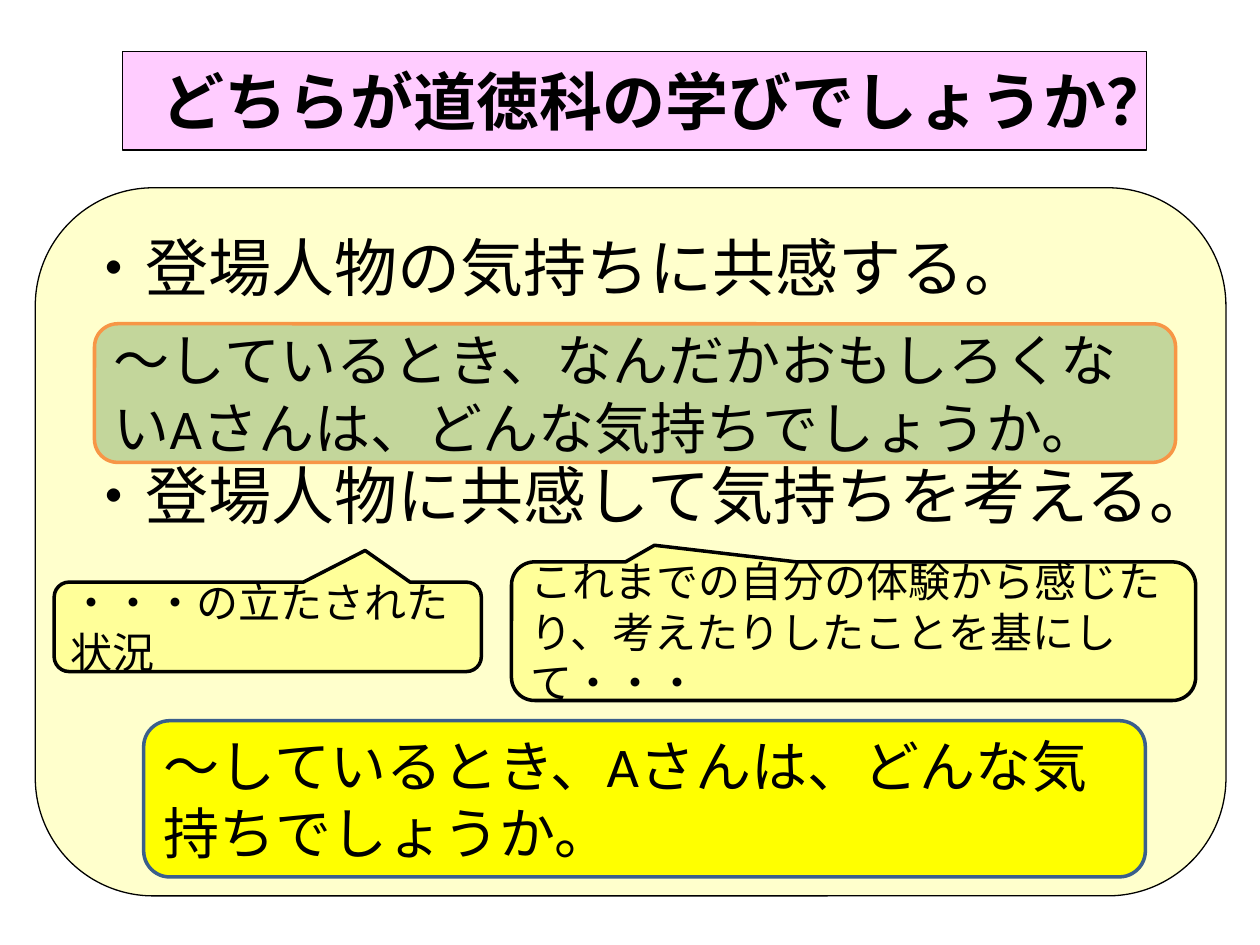
from lxml import etree
from pptx import Presentation
from pptx.dml.color import RGBColor
from pptx.enum.shapes import MSO_SHAPE
from pptx.enum.text import MSO_ANCHOR, MSO_AUTO_SIZE, PP_ALIGN
from pptx.oxml.ns import qn
from pptx.util import Inches, Pt

ROUNDED = MSO_SHAPE.ROUNDED_RECTANGLE
CALLOUT = MSO_SHAPE.ROUNDED_RECTANGULAR_CALLOUT
TITLE_ONLY = 5
BLACK = "000000"

TITLE = dict(
    box=(0.97, 0.41, 8.13, 0.78), texts=["どちらが道徳科の学びでしょうか？"],
    fill="FFCCFF", line=(BLACK, 0.75), font=dict(name="Arial", size=Pt(36), bold=True),
    frame=dict(word_wrap=False), paragraph=dict(alignment=PP_ALIGN.CENTER),
)
PANEL = dict(
    kind=ROUNDED, box=(0.28, 1.49, 9.45, 5.62), fill="FFFFCC", line=(BLACK, 0.75),
    texts=["・登場人物の気持ちに共感する。", "・登場人物に共感して気持ちを考える。"],
    font=dict(name="Arial", size=Pt(36)), frame=dict(vertical_anchor=MSO_ANCHOR.TOP),
    gap=87,
)
CALLOUT_STYLE = dict(
    kind=CALLOUT, fill="FFFF99", line=(BLACK, 2), font=dict(name="Calibri", size=Pt(24)),
)
QUESTION_STYLE = dict(kind=ROUNDED, font=dict(name="Calibri", size=Pt(32)))
SHAPES = [
    PANEL,
    dict(CALLOUT_STYLE, box=(0.43, 4.62, 3.39, 0.71), pointer=(0.228, -0.854),
         texts=["・・・の立たされた状況"]),
    dict(CALLOUT_STYLE, box=(4.06, 4.46, 5.43, 1.1), pointer=(-0.291, -0.62),
         texts=["これまでの自分の体験から感じたり、考えたりしたことを基にして・・・"]),
    dict(QUESTION_STYLE, box=(0.75, 2.57, 8.58, 1.1), fill="C3D69B", line=("F79646", 2),
         texts=["～しているとき、なんだかおもしろくないAさんは、どんな気持ちでしょうか。"]),
    dict(QUESTION_STYLE, box=(1.14, 5.72, 7.95, 1.24), fill="FFFF00", line=("3A5F8C", 2),
         texts=["～しているとき、Aさんは、どんな気持ちでしょうか。"]),
]


def color(hex_value):
    return RGBColor.from_string(hex_value)


def assign(target, values):
    for name, value in values.items():
        setattr(target, name, value)


def paint(shape, item):
    shape.fill.solid()
    shape.fill.fore_color.rgb = color(item["fill"])
    line_color, line_width = item["line"]
    shape.line.color.rgb = color(line_color)
    shape.line.width = Pt(line_width)


def write(shape, item):
    frame = shape.text_frame
    frame.text = "\n".join(item["texts"])
    assign(frame, dict(word_wrap=True, auto_size=MSO_AUTO_SIZE.NONE,
                       vertical_anchor=MSO_ANCHOR.MIDDLE) | item.get("frame", {}))
    for index, paragraph in enumerate(frame.paragraphs):
        assign(paragraph, dict(alignment=PP_ALIGN.LEFT) | item.get("paragraph", {}))
        if index:
            paragraph.space_before = Pt(item["gap"])
        assign(paragraph.font, item["font"])
        for run in paragraph.runs:
            assign(run.font, item["font"])
            run.font.color.rgb = color(BLACK)


def add_title(slide, item):
    shape = slide.shapes.title
    edges = map(Inches, item["box"])
    assign(shape, dict(zip(("left", "top", "width", "height"), edges)))
    geometry = etree.SubElement(shape.element.spPr, qn("a:prstGeom"), prst="roundRect")
    etree.SubElement(geometry, qn("a:avLst"))
    paint(shape, item)
    write(shape, item)


def add_box(slide, item):
    shape = slide.shapes.add_shape(item["kind"], *map(Inches, item["box"]))
    shape.shadow.inherit = False
    for index, value in enumerate(item.get("pointer", ())):
        shape.adjustments[index] = value
    paint(shape, item)
    write(shape, item)


def main():
    presentation = Presentation()
    presentation.slide_width, presentation.slide_height = Inches(10), Inches(7.5)
    slide = presentation.slides.add_slide(presentation.slide_layouts[TITLE_ONLY])
    add_title(slide, TITLE)
    for item in SHAPES:
        add_box(slide, item)
    presentation.save("out.pptx")


if __name__ == "__main__":
    main()
